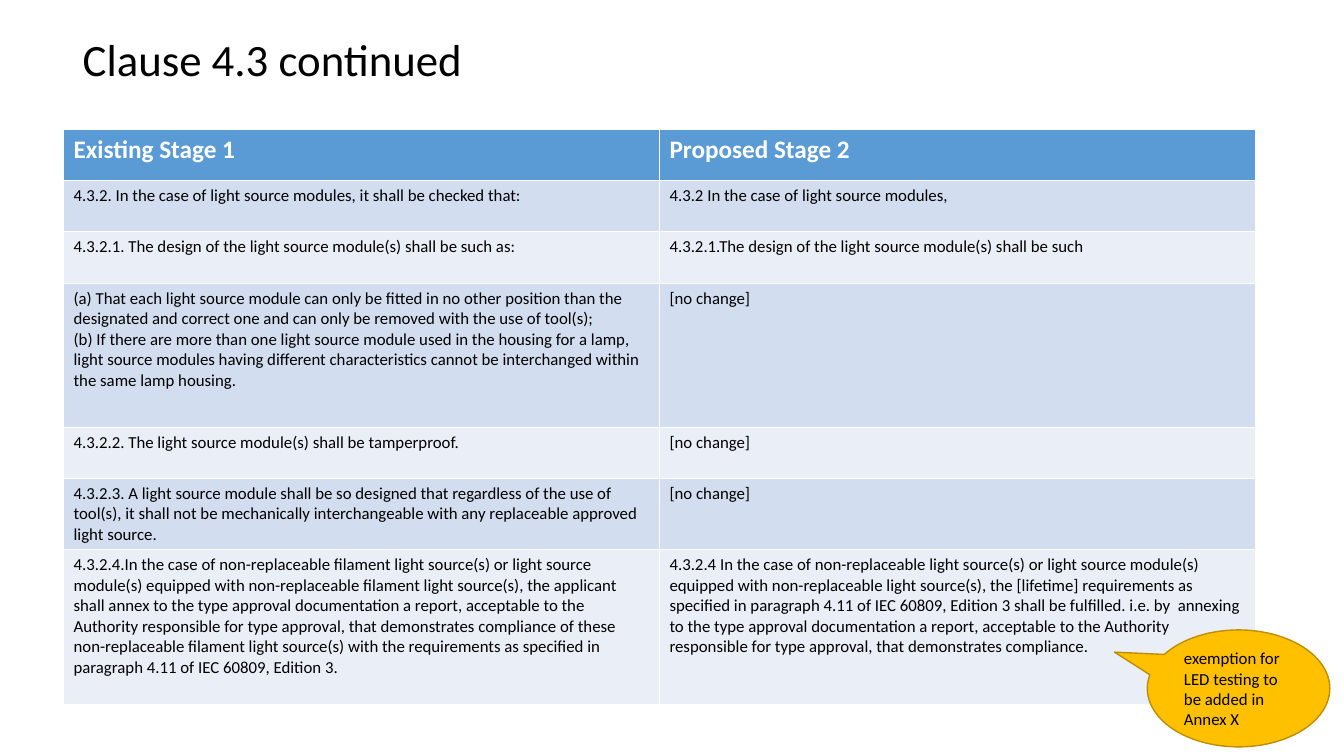
"""Build the slide that compares two stages of clause 4.3."""
from pptx import Presentation
from pptx.dml import color
from pptx.enum import shapes, text
from pptx.util import Inches, Pt

WIDTH, HEIGHT = Inches(13.33), Inches(7.5)
FONT = "Calibri"
COLOURS = {
    "ink": "000000", "paper": "FFFFFF", "header": "5B9BD5",
    "odd": "D2DEEF", "even": "EAEFF7", "callout": "FFC000", "edge": "BD8E00",
}
ROW_SHARES = [6.8, 6.8, 6.8, 19.1, 6.7, 9.4, 20.5]
CLAUSES = [
    ("Existing Stage 1", "Proposed Stage 2"),
    ("4.3.2. In the case of light source modules, it shall be checked that:",
     "4.3.2 In the case of light source modules,"),
    ("4.3.2.1. The design of the light source module(s) shall be such as:",
     "4.3.2.1.The design of the light source module(s) shall be such"),
    ("(a) That each light source module can only be fitted in no other position than the "
     "designated and correct one and can only be removed with the use of tool(s);\n"
     "(b) If there are more than one light source module used in the housing for a lamp, "
     "light source modules having different characteristics cannot be interchanged within "
     "the same lamp housing.",
     "[no change]"),
    ("4.3.2.2. The light source module(s) shall be tamperproof.", "[no change]"),
    ("4.3.2.3. A light source module shall be so designed that regardless of the use of "
     "tool(s), it shall not be mechanically interchangeable with any replaceable approved "
     "light source.",
     "[no change]"),
    ("4.3.2.4.In the case of non-replaceable filament light source(s) or light source "
     "module(s) equipped with non-replaceable filament light source(s), the applicant "
     "shall annex to the type approval documentation a report, acceptable to the "
     "Authority responsible for type approval, that demonstrates compliance of these "
     "non-replaceable filament light source(s) with the requirements as specified in "
     "paragraph 4.11 of IEC 60809, Edition 3.",
     "4.3.2.4 In the case of non-replaceable light source(s) or light source module(s) "
     "equipped with non-replaceable light source(s), the [lifetime] requirements as "
     "specified in paragraph 4.11 of IEC 60809, Edition 3 shall be fulfilled. i.e. by  "
     "annexing to the type approval documentation a report, acceptable to the Authority "
     "responsible for type approval, that demonstrates compliance."),
]


def across(share):
    """Return a percentage of the slide's width."""
    return round(WIDTH * share / 100)


def down(share):
    """Return a percentage of the slide's height."""
    return round(HEIGHT * share / 100)


def area(left, top, width, height):
    """Return a rectangle given in percentages of the slide."""
    return across(left), down(top), across(width), down(height)


def paint(fill, name):
    """Make a fill solid in a named colour."""
    fill.solid()
    fill.fore_color.rgb = color.RGBColor.from_string(COLOURS[name])


def write(frame, words, size, ink="ink", bold=False):
    """Write each line of the words as a left-aligned paragraph."""
    for index, line in enumerate(words.split("\n")):
        para = frame.add_paragraph() if index else frame.paragraphs[0]
        para.alignment = text.PP_ALIGN.LEFT
        span = para.add_run()
        span.text = line
        span.font.name, span.font.size, span.font.bold = FONT, Pt(size), bold
        span.font.color.rgb = color.RGBColor.from_string(COLOURS[ink])


def add_title(page, words):
    """Place and fill the title placeholder."""
    title = page.shapes.title
    title.left, title.top, title.width, title.height = area(5.4, 3.33, 86.27, 9.87)
    frame = title.text_frame
    frame.word_wrap = True
    frame.auto_size = text.MSO_AUTO_SIZE.NONE
    frame.vertical_anchor = text.MSO_ANCHOR.MIDDLE
    write(frame, words, 32)
    frame.paragraphs[0].line_spacing = 0.9


def add_clauses(page):
    """Add the two-column comparison table."""
    bounds = area(4.73, 17.07, 88.68, sum(ROW_SHARES))
    table = page.shapes.add_table(len(CLAUSES), 2, *bounds).table
    for index, (share, clauses) in enumerate(zip(ROW_SHARES, CLAUSES)):
        table.rows[index].height = down(share)
        band = "odd" if index % 2 else "even"
        for cell, words in zip(table.rows[index].cells, clauses):
            paint(cell.fill, band if index else "header")
            if index:
                write(cell.text_frame, words, 12)
            else:
                write(cell.text_frame, words, 18, "paper", True)


def add_callout(page, words):
    """Add the oval callout that points at the last clause."""
    callout = page.shapes.add_shape(
        shapes.MSO_SHAPE.OVAL_CALLOUT, *area(85.37, 83.33, 13.58, 15.47))
    callout.shadow.inherit = False
    callout.adjustments[0], callout.adjustments[1] = -0.68, -0.31
    paint(callout.fill, "callout")
    paint(callout.line.fill, "edge")
    callout.line.width = Pt(1)
    callout.text_frame.word_wrap = True
    callout.text_frame.vertical_anchor = text.MSO_ANCHOR.MIDDLE
    write(callout.text_frame, words, 12)


def main():
    """Build and save the deck."""
    deck = Presentation()
    deck.slide_width, deck.slide_height = WIDTH, HEIGHT
    page = deck.slides.add_slide(deck.slide_layouts[5])
    paint(page.background.fill, "paper")
    add_clauses(page)
    add_callout(page, "exemption for LED testing to be added in Annex X")
    add_title(page, "Clause 4.3 continued")
    deck.save("out.pptx")


if __name__ == "__main__":
    main()
